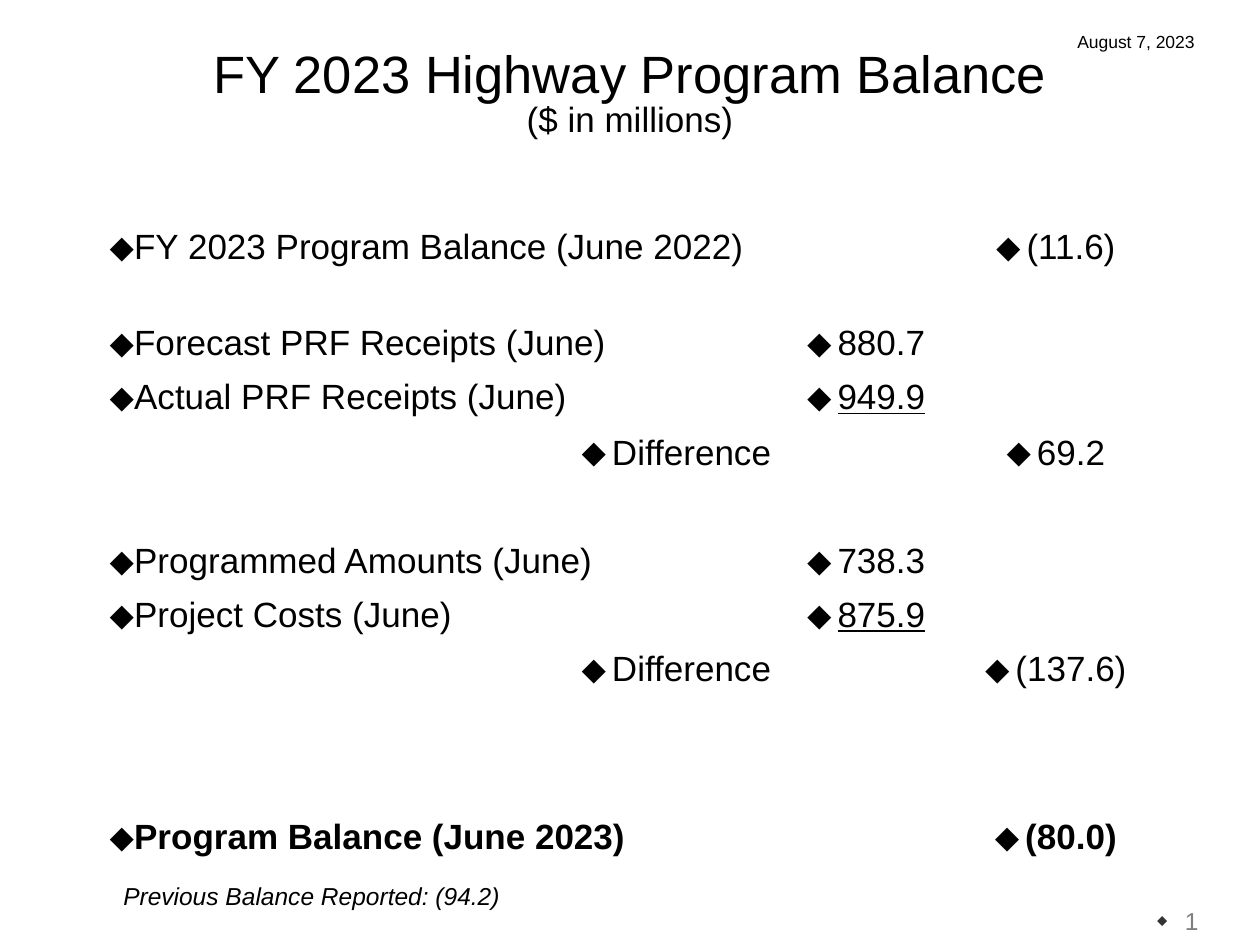
from lxml import etree
from pptx import Presentation
from pptx.dml.color import RGBColor
from pptx.enum.text import MSO_ANCHOR as MA, MSO_AUTO_SIZE as AS, PP_ALIGN as PA
from pptx.oxml.ns import qn
from pptx.util import Inches, Pt


def style(p, text, size, color="000000", align=PA.LEFT, **fmt):
    p.alignment = align
    r = p.add_run()
    r.text = text
    r.font.color.rgb = RGBColor.from_string(color)
    for k, v in {"name": "Arial", "size": Pt(size), **fmt}.items():
        setattr(r.font, k, v)


def bullet(p, percent, indent, color):
    pPr = p._p.get_or_add_pPr()
    pPr.set("marL", str(Inches(indent)))
    pPr.set("indent", str(-Inches(indent)))
    clr = etree.SubElement(pPr, qn("a:buClr"))
    etree.SubElement(clr, qn("a:srgbClr"), val=color)
    etree.SubElement(pPr, qn("a:buSzPct"), val=str(percent * 1000))
    etree.SubElement(pPr, qn("a:buFont"), typeface="Arial")
    etree.SubElement(pPr, qn("a:buChar"), char="⬥")


prs = Presentation()
prs.slide_width, prs.slide_height = Inches(10), Inches(7.5)
s = prs.slides.add_slide(prs.slide_layouts[0])
sub = s.placeholders[1]._element
sub.getparent().remove(sub)

sp = s.shapes.title
sp.left, sp.top, sp.width, sp.height = [Inches(v) for v in (0, 0.2, 10, 1.11)]
tf = sp.text_frame
tf.auto_size, tf.vertical_anchor, tf.word_wrap = AS.NONE, MA.MIDDLE, True
p = tf.paragraphs[0]
p.line_spacing = 0.85
style(p, "FY 2023 Highway Program Balance", 30, align=PA.CENTER)
p.add_line_break()
style(p, "($ in millions)", 20, align=PA.CENTER)

rows = [
    ("", "", ""),
    ("FY 2023 Program Balance (June 2022)", "", "(11.6)"),
    ("Forecast PRF Receipts (June)", "880.7", ""),
    ("Actual PRF Receipts (June)", "949.9", ""),
    ("Difference", "", "69.2"),
    ("", "", ""),
    ("Programmed Amounts (June)", "738.3", ""),
    ("Project Costs (June)", "875.9", ""),
    ("Difference", "", "(137.6)"),
    ("", "", ""),
    ("", "", ""),
    ("Program Balance (June 2023)", "", "(80.0)"),
]
widths = [5.45, 1.36, 1.65]
heights = {0: 0.65, 1: 0.76, 3: 0.44, 10: 0.47}
underlined = ("949.9", "875.9")

gf = s.shapes.add_table(len(rows), len(widths), Inches(0.77), Inches(1.11),
                        Inches(8.46), Inches(5.79))
tbl = gf.table
tbl.first_row = tbl.horz_banding = False
tbl._tbl.tblPr.find(qn("a:tableStyleId")).text = "{2D5ABB26-0587-4C30-8999-92F81FD0307C}"
for col, w in zip(tbl.columns, widths):
    col.width = Inches(w)
for i, row in enumerate(rows):
    tbl.rows[i].height = Inches(heights.get(i, 0.43))
    for j, text in enumerate(row):
        cell = tbl.cell(i, j)
        cell.fill.background()
        if not text:
            continue
        align = PA.CENTER if j else PA.RIGHT if text == "Difference" else PA.LEFT
        cell.margin_right = Inches(0.15 if j else 0.1)
        p = cell.text_frame.paragraphs[0]
        style(p, text, 20, align=align, bold=i == len(rows) - 1,
              underline=text in underlined)
        bullet(p, 100, 0 if align == PA.LEFT else 0.24, "000000")

notes = [
    ("Previous Balance Reported: (94.2)", (0.88, 6.94, 4.32, 0.34), MA.TOP,
     {"size": 14, "italic": True}),
    ("1", (7.21, 6.97, 2.4, 0.5), MA.BOTTOM,
     {"size": 14, "color": "808080", "align": PA.RIGHT}),
    ("August 7, 2023", (8.22, 0.2, 1.59, 0.27), MA.TOP,
     {"size": 10, "align": PA.CENTER}),
]
for text, box, anchor, fmt in notes:
    tf = s.shapes.add_textbox(*[Inches(v) for v in box]).text_frame
    tf.word_wrap, tf.vertical_anchor = True, anchor
    p = tf.paragraphs[0]
    style(p, text, **fmt)
    if text == "1":
        bullet(p, 60, 0.22, "333333")

prs.save("out.pptx")
